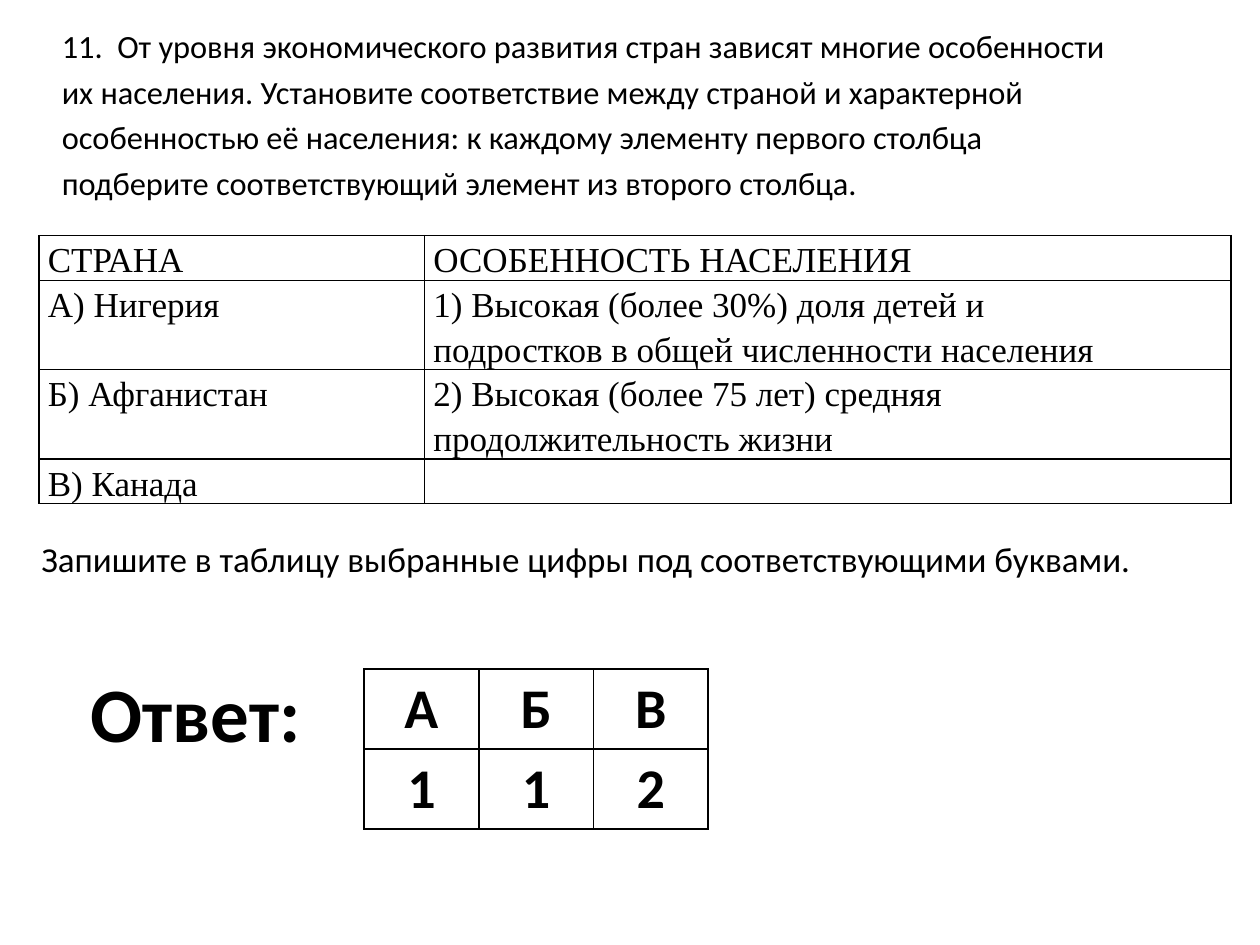
"""Build a quiz slide that matches countries with features of their population."""
from dataclasses import dataclass

from lxml import etree
from pptx import Presentation
from pptx.dml.color import RGBColor
from pptx.enum.text import MSO_ANCHOR, MSO_AUTO_SIZE, PP_ALIGN
from pptx.oxml.ns import qn
from pptx.util import Inches, Pt

LEFT, CENTER = PP_ALIGN.LEFT, PP_ALIGN.CENTER
TOP = MSO_ANCHOR.TOP
FIXED, GROW = MSO_AUTO_SIZE.NONE, MSO_AUTO_SIZE.SHAPE_TO_FIT_TEXT
WIDE, HIGH = 10, 7.5

TASK = [
    "11.  От уровня экономического развития стран зависят многие особенности",
    "их населения. Установите соответствие между страной и характерной",
    "особенностью её населения: к каждому элементу первого столбца",
    "подберите соответствующий элемент из второго столбца.",
]
MATCH = [
    (["СТРАНА"], ["ОСОБЕННОСТЬ НАСЕЛЕНИЯ"]),
    (["А) Нигерия"], ["1) Высокая (более 30%) доля детей и",
                      "подростков в общей численности населения"]),
    (["Б) Афганистан"], ["2) Высокая (более 75 лет) средняя",
                         "продолжительность жизни"]),
    (["В) Канада"], []),
]
HINT = ["Запишите в таблицу выбранные цифры под соответствующими буквами."]
LABEL = ["Ответ:"]
ANSWER = [(["А"], ["Б"], ["В"]), (["1"], ["1"], ["2"])]


@dataclass(frozen=True)
class Theme:
    """Colours, fonts and type sizes."""
    ink: str = "000000"
    sans: str = "Calibri"
    serif: str = "Times New Roman"
    task: float = 18.5
    body: float = 20
    mark: float = 32
    label: float = 44
    rule: float = 1


LOOK = Theme()
INK = RGBColor.from_string(LOOK.ink)


def assign(item, **values):
    """Set attributes from format values."""
    for name, value in values.items():
        setattr(item, name, value)


def place(item, left, top, width, height):
    """Put an item at a spot given in inches."""
    spot = dict(left=left, top=top, width=width, height=height)
    assign(item, **{name: Inches(size) for name, size in spot.items()})


def write(frame, lines, size, font=LOOK.sans, bold=False, **form):
    """Write each line as a paragraph."""
    for i, line in enumerate(lines):
        para = frame.add_paragraph() if i else frame.paragraphs[0]
        assign(para, **form)
        run = para.add_run()
        run.text = line
        assign(run.font, size=Pt(size), name=font, bold=bold)
        run.font.color.rgb = INK


def label(slide, spot, lines, size, wrap=True, bold=False):
    """Add a text box."""
    box = slide.shapes.add_textbox(*map(Inches, spot))
    assign(box.text_frame, word_wrap=wrap, auto_size=GROW)
    write(box.text_frame, lines, size, bold=bold)


def border(cell):
    """Rule all four sides of a cell."""
    props = cell._tc.get_or_add_tcPr()
    for side in ("lnL", "lnR", "lnT", "lnB"):
        line = etree.SubElement(props, qn(f"a:{side}"), w=str(Pt(LOOK.rule)))
        fill = etree.SubElement(line, qn("a:solidFill"))
        etree.SubElement(fill, qn("a:srgbClr"), val=LOOK.ink)


def grid(slide, left, top, cols, rows, data, inset, **form):
    """Add a ruled table without fills."""
    spot = map(Inches, (left, top, sum(cols), sum(rows)))
    table = slide.shapes.add_table(len(rows), len(cols), *spot).table
    assign(table, first_row=False, horz_banding=False)
    for col, width in zip(table.columns, cols):
        col.width = Inches(width)
    for row, height, texts in zip(table.rows, rows, data):
        row.height = Inches(height)
        for cell, lines in zip(row.cells, texts):
            side, edge = map(Inches, inset)
            assign(cell, margin_left=side, margin_right=side,
                   margin_top=edge, margin_bottom=edge, vertical_anchor=TOP)
            border(cell)
            cell.fill.background()
            write(cell.text_frame, lines, **form)


def main():
    """Lay out the slide and save it."""
    deck = Presentation()
    assign(deck, slide_width=Inches(WIDE), slide_height=Inches(HIGH))
    slide = deck.slides.add_slide(deck.slide_layouts[1])
    head, task = slide.placeholders
    head.element.getparent().remove(head.element)

    place(task, 0.39, 0.16, 9, 1.72)
    assign(task.text_frame, auto_size=FIXED, word_wrap=True)
    write(task.text_frame, TASK, LOOK.task, alignment=LEFT)
    for para in task.text_frame.paragraphs:
        etree.SubElement(para._p.get_or_add_pPr(), qn("a:buNone"))

    line = 0.25
    rows = [line * max(map(len, texts)) for texts in MATCH]
    grid(slide, 0.31, 1.87, [3.06, 6.4], rows, MATCH, (0.07, 0),
         size=LOOK.body, font=LOOK.serif, line_spacing=1.15)
    label(slide, (0.23, 4.22, WIDE - 0.23, 0.44), HINT, LOOK.body)
    label(slide, (0.62, 5.23, 1.88, 0.84), LABEL, LOOK.label,
          wrap=False, bold=True)
    grid(slide, 2.89, 5.31, [0.91] * 3, [0.63] * 2, ANSWER, (0.1, 0.05),
         size=LOOK.mark, bold=True, alignment=CENTER)
    deck.save("out.pptx")


if __name__ == "__main__":
    main()
